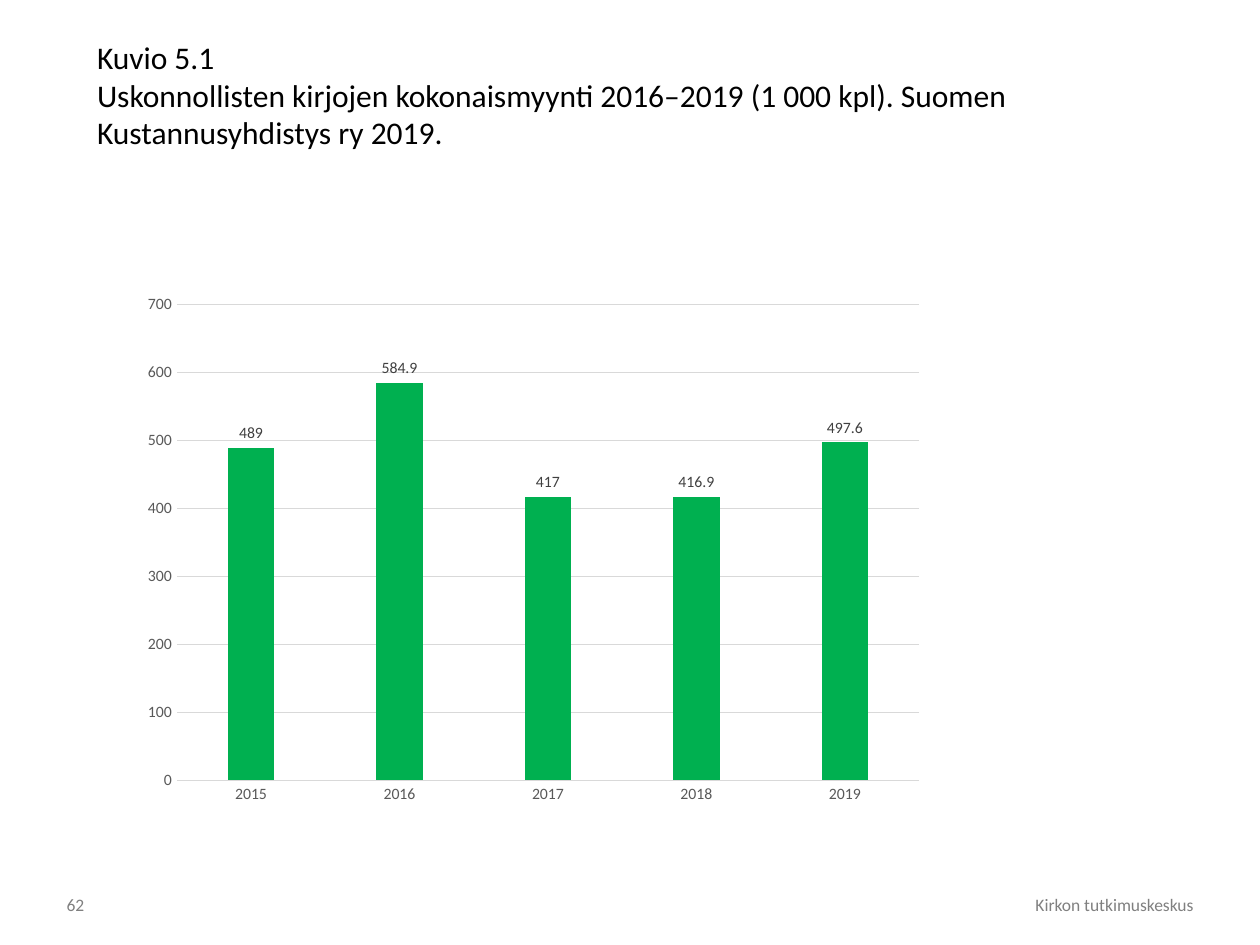
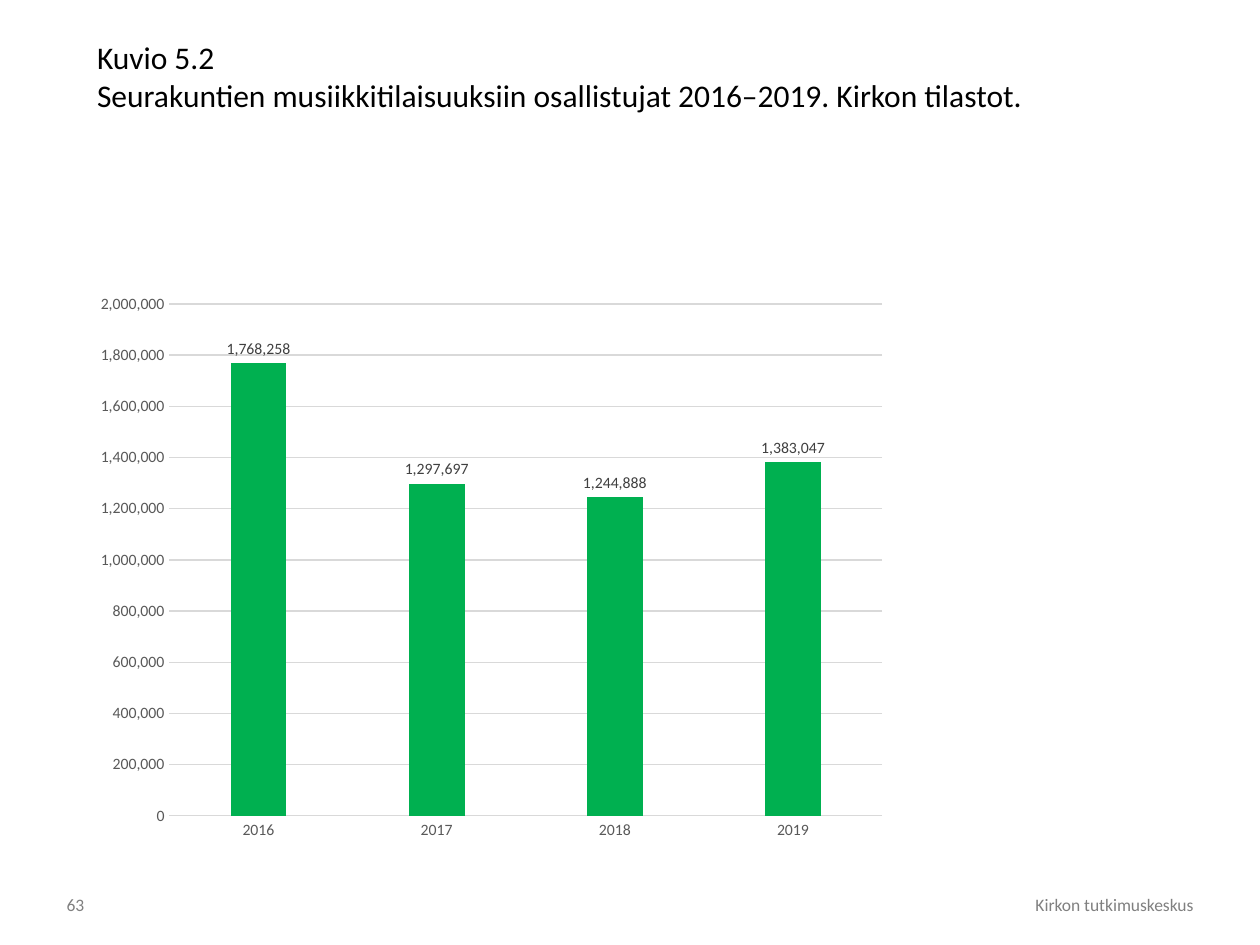
from lxml import etree
from pptx import Presentation
from pptx import util as u
from pptx.chart.data import CategoryChartData
from pptx.dml.color import RGBColor
from pptx.enum import chart as ch, text as t
from pptx.oxml import ns

COLORS = {"title": "000000", "footer": "808080", "bar": "00B050",
          "axis": "595959", "label": "404040", "grid": "D9D9D9"}
FONT = "Calibri"
WIDTH, HEIGHT = u.Inches(10), u.Inches(7.5)
TITLE_ONLY = 5
FOOTER_TOP, FOOTER_HEIGHT = 94.13, 3.2

FIGURES = [
    {"page": 62, "title_height": 13.47,
     "title": ["Kuvio 5.1",
               "Uskonnollisten kirjojen kokonaismyynti 2016–2019 (1 000 kpl). "
               "Suomen Kustannusyhdistys ry 2019."],
     "chart_box": (9.4, 28, 66.2, 60), "plot": (0.07, 0.07, 0.89, 0.84),
     "number_format": "General",
     "sales": {"2015": 489, "2016": 584.9, "2017": 417, "2018": 416.9, "2019": 497.6}},
    {"page": 63, "title_height": 9.47,
     "title": ["Kuvio 5.2",
               "Seurakuntien musiikkitilaisuuksiin osallistujat 2016–2019. Kirkon tilastot."],
     "chart_box": (6.7, 30, 64.6, 60), "plot": None,
     "number_format": "#,##0",
     "sales": {"2016": 1768258, "2017": 1297697, "2018": 1244888, "2019": 1383047}},
]
for figure in FIGURES:
    figure["values"] = figure.pop("sales")


def box(left, top, width, height):
    """Turn percentages of the slide's size into lengths."""
    return (int(WIDTH * left / 100), int(HEIGHT * top / 100),
            int(WIDTH * width / 100), int(HEIGHT * height / 100))


def rgb(name):
    return RGBColor.from_string(COLORS[name])


def style_font(font, size, color):
    font.name, font.size, font.bold = FONT, u.Pt(size), False
    font.color.rgb = rgb(color)


def write(sp, lines, size, color, align=t.PP_ALIGN.LEFT, anchor=t.MSO_ANCHOR.MIDDLE,
          auto_size=t.MSO_AUTO_SIZE.NONE):
    tf = sp.text_frame
    tf.word_wrap, tf.auto_size, tf.vertical_anchor = True, auto_size, anchor
    for i, line in enumerate(lines):
        p = tf.paragraphs[0] if i == 0 else tf.add_paragraph()
        p.alignment = align
        r = p.add_run()
        r.text = line
        style_font(r.font, size, color)


def add_title(s, lines, height):
    sp = s.shapes.title
    sp.left, sp.top, sp.width, sp.height = box(6.7, 3.33, 81.9, height)
    write(sp, lines, 18, "title", anchor=t.MSO_ANCHOR.TOP,
          auto_size=t.MSO_AUTO_SIZE.SHAPE_TO_FIT_TEXT)


def add_footer(s, page):
    for left, width, line, align in (
            (29.5, 66.2, "Kirkon tutkimuskeskus", t.PP_ALIGN.RIGHT),
            (4.3, 4.7, str(page), t.PP_ALIGN.LEFT)):
        sp = s.shapes.add_textbox(*box(left, FOOTER_TOP, width, FOOTER_HEIGHT))
        write(sp, [line], 10, "footer", align)


def style_line(line):
    line.color.rgb = rgb("grid")
    line.width = u.Pt(0.75)


def place_plot(chart, shares):
    """Fix the inner plot area as shares of the chart's size."""
    area = chart.element.find(".//" + ns.qn("c:plotArea"))
    for old in area.findall(ns.qn("c:layout")):
        area.remove(old)
    layout = etree.Element(ns.qn("c:layout"))
    area.insert(0, layout)
    manual = etree.SubElement(layout, ns.qn("c:manualLayout"))
    settings = [("layoutTarget", "inner"), ("xMode", "edge"), ("yMode", "edge")]
    for tag, value in settings + list(zip("xywh", shares)):
        etree.SubElement(manual, ns.qn("c:" + tag)).set("val", str(value))


def add_bar_chart(s, values, position, number_format, plot_shares):
    data = CategoryChartData(number_format=number_format)
    data.categories = list(values)
    data.add_series("Series 1", list(values.values()))
    chart = s.shapes.add_chart(ch.XL_CHART_TYPE.COLUMN_CLUSTERED, *box(*position), data).chart
    chart.has_legend = chart.has_title = False
    style_font(chart.font, 10, "title")

    for axis in (chart.category_axis, chart.value_axis):
        axis.major_tick_mark = axis.minor_tick_mark = ch.XL_TICK_MARK.NONE
        style_font(axis.tick_labels.font, 9, "axis")
    style_line(chart.category_axis.format.line)
    chart.value_axis.format.line.fill.background()
    style_line(chart.value_axis.major_gridlines.format.line)
    chart.value_axis.tick_labels.number_format = number_format
    chart.value_axis.tick_labels.number_format_is_linked = False

    plot = chart.plots[0]
    plot.gap_width, plot.overlap, plot.vary_by_categories = 219, -27, False
    series = plot.series[0]
    series.format.fill.solid()
    series.format.fill.fore_color.rgb = rgb("bar")
    labels = series.data_labels
    labels.show_value = True
    labels.position = ch.XL_LABEL_POSITION.OUTSIDE_END
    style_font(labels.font, 9, "label")
    if plot_shares:
        place_plot(chart, plot_shares)


def main():
    prs = Presentation()
    prs.slide_width, prs.slide_height = WIDTH, HEIGHT
    for figure in FIGURES:
        s = prs.slides.add_slide(prs.slide_layouts[TITLE_ONLY])
        add_footer(s, figure["page"])
        add_title(s, figure["title"], figure["title_height"])
        add_bar_chart(s, figure["values"], figure["chart_box"],
                      figure["number_format"], figure["plot"])
    prs.save("out.pptx")


if __name__ == "__main__":
    main()
